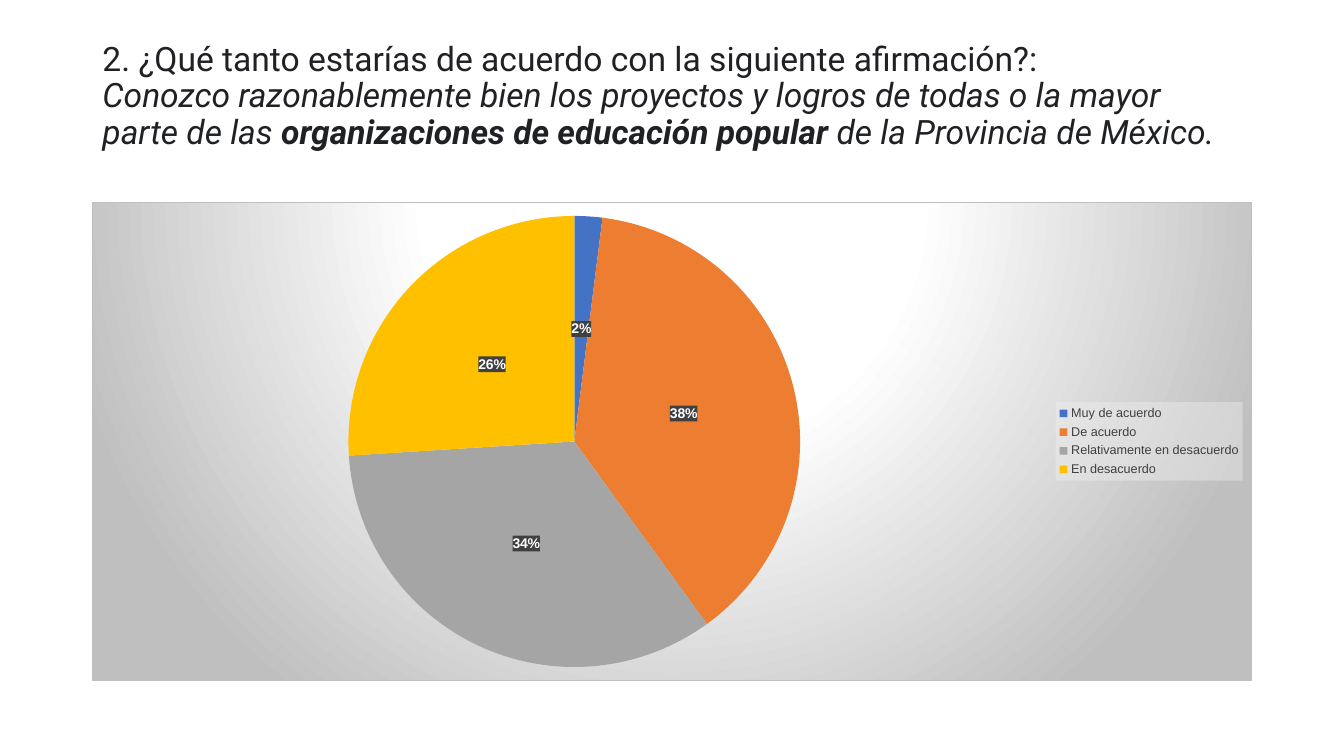
import copy
import dataclasses
import typing

import pptx
import pptx.chart.data
import pptx.dml.color
import pptx.enum.chart
import pptx.enum.text
import pptx.oxml
import pptx.oxml.ns
import pptx.util

Pt = pptx.util.Pt

HUES = {
    "page": "FFFFFF", "title": "202124", "base": "000000", "key": "404040",
    "label": "FFFFFF", "tag": "404040", "pane": "F2F2F2", "edge": "BFBFBF",
}


@dataclasses.dataclass
class Slice:
    name: str
    share: int
    hue: str


@dataclasses.dataclass
class Piece:
    text: str
    italic: bool = True
    bold: bool = False
    ends: bool = False  # a line break follows


SLICES = [
    Slice("Muy de acuerdo", 2, "4472C4"),
    Slice("De acuerdo", 38, "ED7D31"),
    Slice("Relativamente en desacuerdo", 34, "A5A5A5"),
    Slice("En desacuerdo", 26, "FFC000"),
]
PIECES = [
    Piece("2. ¿Qué tanto estarías de acuerdo con la siguiente afirmación?:",
          italic=False, ends=True),
    Piece("Conozco razonablemente bien los proyectos y logros de todas "
          "o la mayor parte de las "),
    Piece("organizaciones de educación popular", bold=True),
    Piece(" de la Provincia de México."),
]


def apply(item: typing.Any, form: dict[str, typing.Any]) -> None:
    for name, value in form.items():
        setattr(item, name, value)


def style(font: typing.Any, hue: str, **form: typing.Any) -> None:
    apply(font, form)
    font.color.rgb = pptx.dml.color.RGBColor.from_string(hue)


def solid(hue: str, alpha: int) -> str:
    return (f'<a:solidFill><a:srgbClr val="{hue}"><a:alpha val="{alpha}000"/>'
            '</a:srgbClr></a:solidFill>')


def back(part: typing.Any, fill: str) -> None:
    """Put a fill behind a chart part that already has text settings."""
    space = pptx.oxml.ns.nsdecls("c", "a")
    shape = pptx.oxml.parse_xml(f"<c:spPr {space}>{fill}</c:spPr>")
    part.find(pptx.oxml.ns.qn("c:txPr")).addprevious(shape)


def add_title(slide: typing.Any) -> None:
    title = slide.shapes.title
    apply(title, dict(left=Pt(66), top=Pt(28.8), width=Pt(828), height=Pt(104.4)))
    frame = title.text_frame
    apply(frame, dict(
        word_wrap=True, auto_size=pptx.enum.text.MSO_AUTO_SIZE.NONE,
        vertical_anchor=pptx.enum.text.MSO_ANCHOR.TOP,
        margin_left=Pt(7.2), margin_right=Pt(7.2),
        margin_top=Pt(1.5), margin_bottom=Pt(3.6)))
    para = frame.paragraphs[0]
    apply(para, dict(alignment=pptx.enum.text.PP_ALIGN.LEFT, line_spacing=0.9))
    for piece in PIECES:
        run = para.add_run()
        run.text = piece.text
        style(run.font, HUES["title"], name="Roboto", size=Pt(24),
              italic=piece.italic, bold=piece.bold)
        if piece.ends:
            # The break takes the size of its run
            para.add_line_break()
            para._p[-1].append(copy.deepcopy(run._r.rPr))


def add_pie(slide: typing.Any) -> None:
    data = pptx.chart.data.CategoryChartData()
    data.categories = [part.name for part in SLICES]
    data.add_series("Series 1", [part.share for part in SLICES])
    chart = slide.shapes.add_chart(
        pptx.enum.chart.XL_CHART_TYPE.PIE,
        Pt(66), Pt(144), Pt(828), Pt(342.75), data).chart
    apply(chart, dict(has_title=False, has_legend=True))
    style(chart.font, HUES["base"], name="Arial", size=Pt(10))

    # Round gradient and thin border
    stops = "".join(
        f'<a:gs pos="{spot}000"><a:srgbClr val="{hue}"/></a:gs>'
        for spot, hue in ((0, HUES["page"]), (39, HUES["page"]), (100, HUES["edge"])))
    back(chart._chartSpace,
         f'<a:gradFill><a:gsLst>{stops}</a:gsLst><a:path path="circle">'
         '<a:fillToRect l="50000" t="-80000" r="50000" b="180000"/></a:path>'
         f'</a:gradFill><a:ln w="{Pt(0.75)}">{solid(HUES["edge"], 100)}</a:ln>')

    # Legend
    legend = chart.legend
    apply(legend, dict(position=pptx.enum.chart.XL_LEGEND_POSITION.RIGHT,
                       include_in_layout=False))
    style(legend.font, HUES["key"], name="Arial", size=Pt(9))
    back(legend._element, solid(HUES["pane"], 39))

    # Slices
    plot = chart.plots[0]
    plot.vary_by_categories = True
    for rank, part in enumerate(SLICES):
        fill = plot.series[0].points[rank].format.fill
        fill.solid()
        fill.fore_color.rgb = pptx.dml.color.RGBColor.from_string(part.hue)

    # Labels
    labels = plot.series[0].data_labels
    apply(labels, dict(
        number_format="0%", number_format_is_linked=False,
        show_percentage=True, show_value=False,
        position=pptx.enum.chart.XL_LABEL_POSITION.CENTER))
    style(labels.font, HUES["label"], name="Arial", size=Pt(10), bold=True)
    back(labels._element, solid(HUES["tag"], 90))


def main() -> None:
    deck = pptx.Presentation()
    apply(deck, dict(slide_width=Pt(960), slide_height=Pt(540)))
    slide = deck.slides.add_slide(deck.slide_layouts[5])
    add_title(slide)
    add_pie(slide)
    deck.save("out.pptx")


if __name__ == "__main__":
    main()
